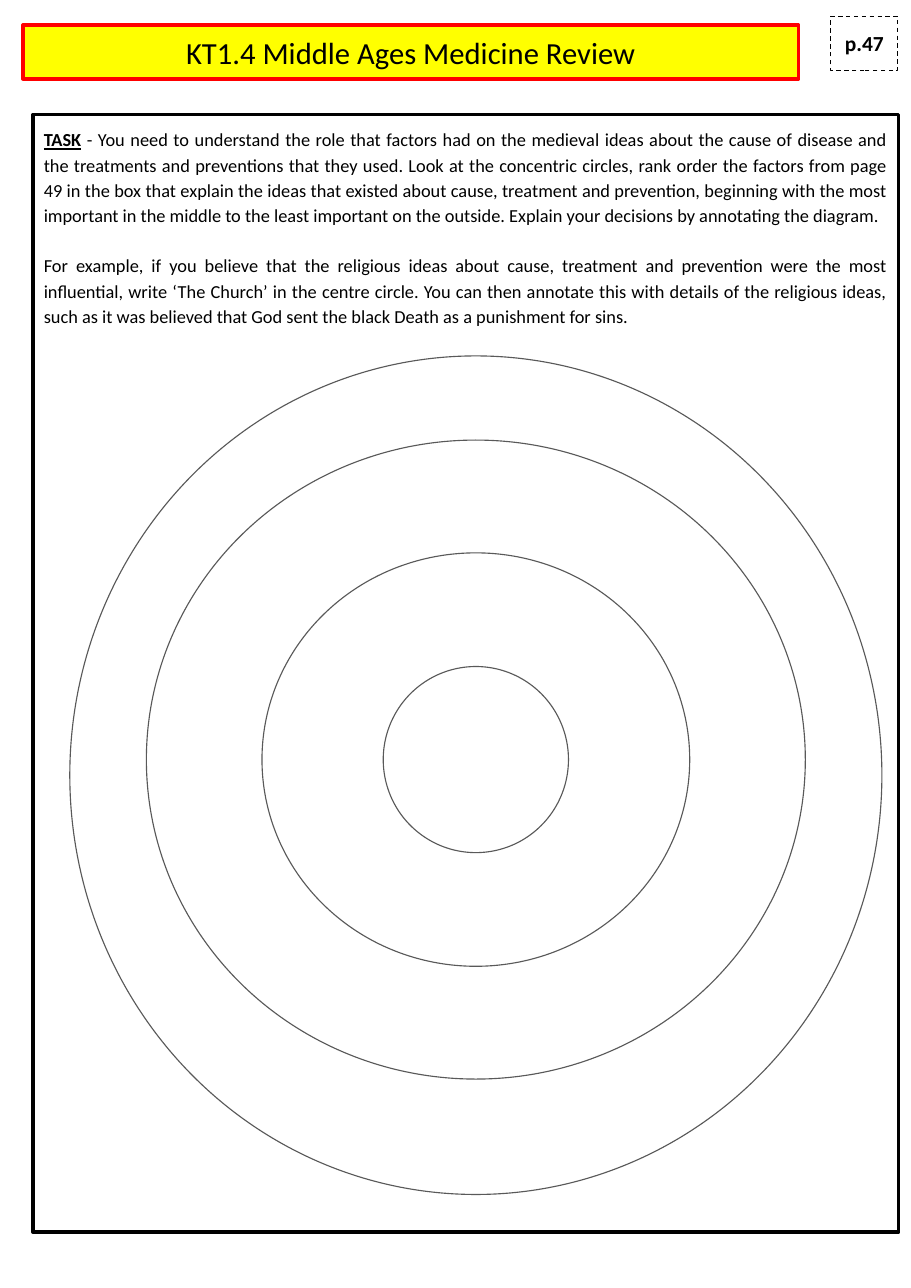
"""Build a review worksheet with a task and concentric ranking circles."""
from pptx import Presentation
from pptx.dml.color import RGBColor
from pptx.enum.dml import MSO_LINE
from pptx.enum.shapes import MSO_SHAPE
from pptx.enum.text import MSO_ANCHOR, PP_ALIGN
from pptx.util import Cm, Pt

COLORS = {"black": "000000", "white": "FFFFFF", "yellow": "FFFF00",
          "red": "FF0000", "grey": "595959"}

presentation = Presentation()
presentation.slide_width, presentation.slide_height = Cm(21), Cm(29.69)
slide = presentation.slides.add_slide(presentation.slide_layouts[6])


def add_outline(kind, left, top, width, height, line, weight, fill=None):
    shape = slide.shapes.add_shape(kind, Cm(left), Cm(top), Cm(width), Cm(height))
    shape.shadow.inherit = False
    if fill:
        shape.fill.solid()
        shape.fill.fore_color.rgb = RGBColor.from_string(COLORS[fill])
    else:
        shape.fill.background()
    shape.line.color.rgb = RGBColor.from_string(COLORS[line])
    shape.line.width = Pt(weight)
    frame = shape.text_frame
    frame.word_wrap = True
    frame.margin_left = frame.margin_right = Cm(0.25)
    frame.margin_top = frame.margin_bottom = Cm(0.25)
    return shape


def write(paragraph, text, size=12, bold=False, underline=False,
          align=PP_ALIGN.CENTER, spacing=1.0, before=0):
    paragraph.alignment = align
    paragraph.line_spacing = spacing
    paragraph.space_before = Pt(before)
    run = paragraph.add_run()
    run.text = text
    run.font.name = "Calibri"
    run.font.size = Pt(size)
    run.font.bold = bold
    run.font.underline = underline
    run.font.color.rgb = RGBColor.from_string(COLORS["black"])


title = add_outline(MSO_SHAPE.RECTANGLE, 0.53, 0.58, 17.88, 1.24, "red", 2.25, "yellow")
title.text_frame.vertical_anchor = MSO_ANCHOR.MIDDLE
write(title.text_frame.paragraphs[0], "KT1.4 Middle Ages Medicine Review", size=20)

task = add_outline(MSO_SHAPE.RECTANGLE, 0.76, 2.64, 19.96, 25.76, "black", 2.25)
task.text_frame.vertical_anchor = MSO_ANCHOR.TOP
body = {"align": PP_ALIGN.JUSTIFY, "spacing": 1.15}
instruction = task.text_frame.paragraphs[0]
write(instruction, "TASK", bold=True, underline=True, **body)
write(instruction,
      " - You need to understand the role that factors had on the medieval ideas about "
      "the cause of disease and the treatments and preventions that they used. Look at "
      "the concentric circles, rank order the factors from page 49 in the box that "
      "explain the ideas that existed about cause, treatment and prevention, beginning "
      "with the most important in the middle to the least important on the outside. "
      "Explain your decisions by annotating the diagram.", **body)
write(task.text_frame.add_paragraph(),
      "For example, if you believe that the religious ideas about cause, treatment and "
      "prevention were the most influential, write ‘The Church’ in the centre circle. "
      "You can then annotate this with details of the religious ideas, such as it was "
      "believed that God sent the black Death as a punishment for sins.",
      before=16, **body)

center_x = 10.97
for width, height, center_y in [(4.27, 4.29, 17.51), (9.86, 9.53, 17.51),
                                (15.19, 14.73, 17.51), (18.72, 19.33, 17.87)]:
    add_outline(MSO_SHAPE.OVAL, center_x - width / 2, center_y - height / 2,
                width, height, "grey", 0.75)

page = add_outline(MSO_SHAPE.RECTANGLE, 19.15, 0.38, 1.55, 1.24, "black", 0.75, "white")
page.line.dash_style = MSO_LINE.DASH
page.text_frame.vertical_anchor = MSO_ANCHOR.MIDDLE
write(page.text_frame.paragraphs[0], "p.47", size=14, bold=True)

presentation.save("out.pptx")
